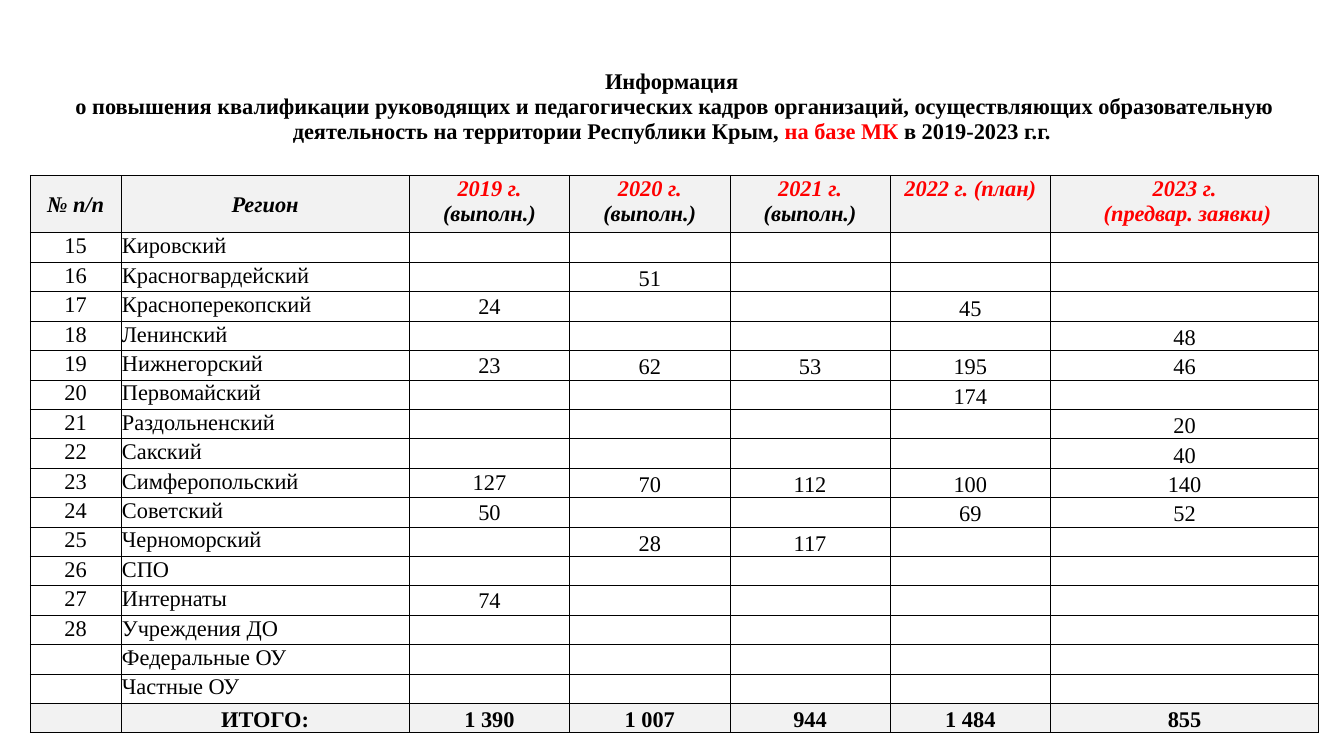
from lxml.etree import SubElement
from pptx import Presentation
from pptx.dml.color import RGBColor
from pptx.enum.text import MSO_ANCHOR, PP_ALIGN
from pptx.oxml import parse_xml
from pptx.oxml.ns import nsdecls, qn
from pptx.util import Inches, Pt

BLACK = RGBColor(0x00, 0x00, 0x00)
RED = RGBColor(0xFF, 0x00, 0x00)
GRAY = RGBColor(0xF2, 0xF2, 0xF2)
FONT_NAME, FONT_SIZE = "Times New Roman", 16
NO_STYLE = "{2D5ABB26-0587-4C30-8999-92F81FD0307C}"

TITLE = [
    ("Информация \nо повышения квалификации руководящих и педагогических кадров организаций, "
     "осуществляющих образовательную деятельность на территории Республики Крым, ", BLACK),
    ("на базе МК", RED),
    (" в 2019-2023 г.г. ", BLACK),
]
HEADERS = [
    [("№ п/п", BLACK)],
    [("Регион", BLACK)],
    [("2019 г.", RED), (" (выполн.)", BLACK)],
    [("2020 г.", RED), (" (выполн.)", BLACK)],
    [("2021 г.", RED), (" (выполн.)", BLACK)],
    [("2022 г. (план)", RED)],
    [("2023 г.\n (предвар. заявки)", RED)],
]
REGIONS = [
    ("15", "Кировский", "", "", "", "", ""),
    ("16", "Красногвардейский", "", "51", "", "", ""),
    ("17", "Красноперекопский", "24", "", "", "45", ""),
    ("18", "Ленинский", "", "", "", "", "48"),
    ("19", "Нижнегорский", "23", "62", "53", "195", "46"),
    ("20", "Первомайский", "", "", "", "174", ""),
    ("21", "Раздольненский", "", "", "", "", "20"),
    ("22", "Сакский", "", "", "", "", "40"),
    ("23", "Симферопольский", "127", "70", "112", "100", "140"),
    ("24", "Советский", "50", "", "", "69", "52"),
    ("25", "Черноморский", "", "28", "117", "", ""),
    ("26", "СПО", "", "", "", "", ""),
    ("27", "Интернаты", "74", "", "", "", ""),
    ("28", "Учреждения ДО", "", "", "", "", ""),
    ("", "Федеральные ОУ", "", "", "", "", ""),
    ("", "Частные ОУ", "", "", "", "", ""),
]
TOTALS = ("", "ИТОГО:", "1 390", "1 007", "944", "1 484", "855")

LEFT, TOP, WIDTH, HEIGHT = 0.3, 0.37, 12.77, 6.9
COLUMN_WIDTHS = [0.9, 2.86, 1.59, 1.59, 1.59, 1.59, 2.66]
TITLE_HEIGHT, HEADER_HEIGHT = 1.37, 0.57
BODY_ROWS = len(REGIONS) + 1
BODY_HEIGHT = (HEIGHT - TITLE_HEIGHT - HEADER_HEIGHT) / BODY_ROWS
ROW_HEIGHTS = [TITLE_HEIGHT, HEADER_HEIGHT] + [BODY_HEIGHT] * BODY_ROWS

REGION_ANCHORS = [MSO_ANCHOR.TOP] * 2 + [MSO_ANCHOR.MIDDLE] + [MSO_ANCHOR.BOTTOM] * 4
HEADER_ANCHORS = [MSO_ANCHOR.MIDDLE] * 2 + [MSO_ANCHOR.TOP] * 5
MARGINS = {"margin_left": Inches(0.01), "margin_top": Inches(0.01),
           "margin_right": Inches(0.01), "margin_bottom": 0}


def set_borders(cell, sides):
    """Draw thin black lines on the given sides, a string of L, R, T and B."""
    for position, side in enumerate(sides):
        line = parse_xml(
            f'<a:ln{side} {nsdecls("a")} w="6350"><a:solidFill>'
            f'<a:srgbClr val="{BLACK}"/></a:solidFill></a:ln{side}>')
        cell._tc.get_or_add_tcPr().insert(position, line)


def fill_cell(cell, spans, anchor, align=PP_ALIGN.CENTER, fill=None, sides="LRTB",
              bold=False, italic=False):
    for name, value in MARGINS.items():
        setattr(cell, name, value)
    cell.vertical_anchor = anchor
    if fill is None:
        cell.fill.background()
    else:
        cell.fill.solid()
        cell.fill.fore_color.rgb = fill
    set_borders(cell, sides)

    para = cell.text_frame.paragraphs[0]
    para.alignment = align
    font_format = {"name": FONT_NAME, "size": Pt(FONT_SIZE), "bold": bold, "italic": italic}
    for text, color in spans:
        for index, line in enumerate(text.split("\n")):
            if index:
                para.add_line_break()
            span = para.add_run()
            span.text = line
            for name, value in font_format.items():
                setattr(span.font, name, value)
            span.font.color.rgb = color
    # The end mark keeps empty cells as low as filled ones.
    SubElement(para._p, qn("a:endParaRPr"), sz=str(FONT_SIZE * 100))


def main():
    deck = Presentation()
    deck.slide_width, deck.slide_height = Inches(13.33), Inches(7.5)
    page = deck.slides.add_slide(deck.slide_layouts[6])
    table = page.shapes.add_table(
        len(ROW_HEIGHTS), len(COLUMN_WIDTHS),
        Inches(LEFT), Inches(TOP), Inches(WIDTH), Inches(HEIGHT)).table
    table.first_row = table.horz_banding = False
    table._tbl.tblPr.find(qn("a:tableStyleId")).text = NO_STYLE
    for column, width in zip(table.columns, COLUMN_WIDTHS):
        column.width = Inches(width)
    for row, height in zip(table.rows, ROW_HEIGHTS):
        row.height = Inches(height)

    table.cell(0, 0).merge(table.cell(0, len(COLUMN_WIDTHS) - 1))
    fill_cell(table.cell(0, 0), TITLE, MSO_ANCHOR.MIDDLE, sides="B", bold=True)
    for column, (spans, anchor) in enumerate(zip(HEADERS, HEADER_ANCHORS)):
        fill_cell(table.cell(1, column), spans, anchor, fill=GRAY, bold=True, italic=True)
    for row, values in enumerate(REGIONS, start=2):
        for column, (text, anchor) in enumerate(zip(values, REGION_ANCHORS)):
            align = PP_ALIGN.LEFT if column == 1 else PP_ALIGN.CENTER
            fill_cell(table.cell(row, column), [(text, BLACK)] if text else [], anchor, align)
    for column, text in enumerate(TOTALS):
        fill_cell(table.cell(len(ROW_HEIGHTS) - 1, column), [(text, BLACK)] if text else [],
                  MSO_ANCHOR.BOTTOM, fill=GRAY, bold=True)
    deck.save("out.pptx")


if __name__ == "__main__":
    main()
